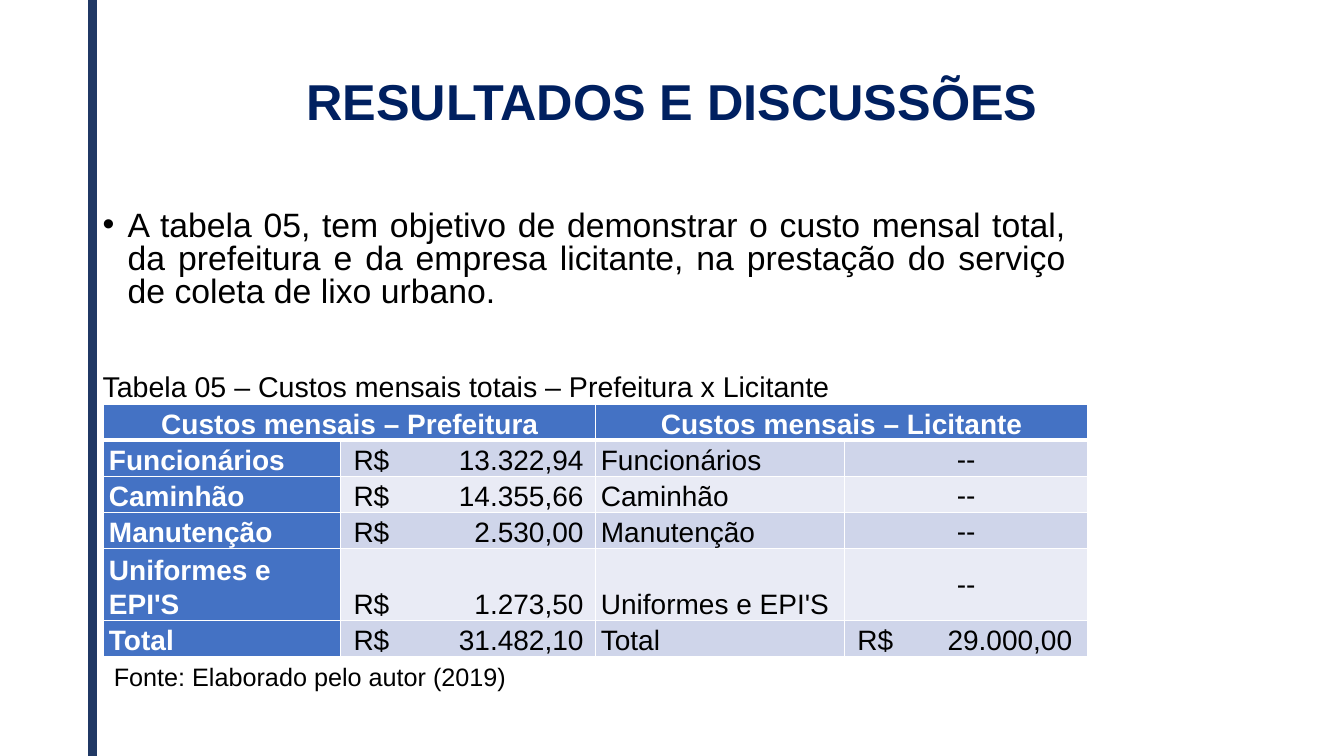
from dataclasses import dataclass

from lxml.etree import SubElement
from pptx import Presentation
from pptx.dml.color import RGBColor
from pptx.enum.shapes import MSO_CONNECTOR
from pptx.enum.text import MSO_ANCHOR, PP_ALIGN
from pptx.oxml import parse_xml
from pptx.oxml.ns import qn
from pptx.util import Pt

NS = 'xmlns:a="http://schemas.openxmlformats.org/drawingml/2006/main"'


@dataclass(frozen=True)
class Theme:
    font: str = "Arial"
    navy: str = "002060"
    bar: str = "203864"
    header: str = "4472C4"
    bands: tuple = ("CFD5EA", "E9EBF5")
    black: str = "000000"
    white: str = "FFFFFF"
    title: float = 36
    body: float = 24.1
    caption: float = 20.4
    cell: float = 20
    source: float = 18


@dataclass(frozen=True)
class CellStyle:
    fill: str
    color: str = "000000"
    bold: bool = False
    align: PP_ALIGN = PP_ALIGN.LEFT
    anchor: MSO_ANCHOR = MSO_ANCHOR.BOTTOM
    top: float = 1
    bottom: float = 1
    tab: float = 0  # right tab stop for amounts, 0 for none


@dataclass(frozen=True)
class Cost:
    item: str
    city: str
    bidder: str
    height: float = 23


T = Theme()
COSTS = [
    Cost("Funcionários", "R$\t13.322,94", "--"),
    Cost("Caminhão", "R$\t14.355,66", "--"),
    Cost("Manutenção", "R$\t2.530,00", "--"),
    Cost("Uniformes e EPI'S", "R$\t1.273,50", "--", 47.5),
    Cost("Total", "R$\t31.482,10", "R$\t29.000,00"),
]
COL_WIDTHS = (169.2, 182.2, 177.8, 173.5)
AMOUNT_TABS = {1: 164.4, 3: 153.5}


def add_run(p, text: str, size: float, color: str = T.black, bold: bool = False) -> None:
    r = p.add_run()
    r.text = text
    r.font.name = T.font
    r.font.size = Pt(size)
    r.font.bold = bold
    r.font.color.rgb = RGBColor.from_string(color)


def add_text_box(s, left: float, top: float, width: float, height: float):
    tf = s.shapes.add_textbox(Pt(left), Pt(top), Pt(width), Pt(height)).text_frame
    tf.word_wrap = True
    return tf


def set_borders(cell, top: float, bottom: float) -> None:
    tcPr = cell._tc.get_or_add_tcPr()
    sides = (("L", 1), ("R", 1), ("T", top), ("B", bottom))
    for i, (side, width) in enumerate(sides):
        tcPr.insert(i, parse_xml(
            f'<a:ln{side} {NS} w="{Pt(width)}"><a:solidFill>'
            f'<a:srgbClr val="{T.white}"/></a:solidFill></a:ln{side}>'))


def fill_cell(cell, text: str, style: CellStyle) -> None:
    cell.margin_left = Pt(9.1 if style.tab else 3.6)
    cell.margin_right = Pt(3.6)
    cell.margin_top = cell.margin_bottom = 0
    cell.vertical_anchor = style.anchor
    cell.fill.solid()
    cell.fill.fore_color.rgb = RGBColor.from_string(style.fill)
    set_borders(cell, style.top, style.bottom)
    p = cell.text_frame.paragraphs[0]
    p.alignment = style.align
    p.line_spacing = 1.07
    if style.tab:
        tabs = SubElement(p._p.get_or_add_pPr(), qn("a:tabLst"))
        SubElement(tabs, qn("a:tab"), pos=str(Pt(style.tab)), algn="r")
    if text:
        add_run(p, text, T.cell, style.color, style.bold)


def add_bar(s) -> None:
    bar = s.shapes.add_connector(MSO_CONNECTOR.STRAIGHT, Pt(66.2), Pt(540), Pt(66.2), 0)
    bar.line.color.rgb = RGBColor.from_string(T.bar)
    bar.line.width = Pt(6)
    SubElement(bar._element.spPr, qn("a:effectLst"))


def add_title(s) -> None:
    sp = s.shapes.title
    sp.left, sp.top, sp.width, sp.height = Pt(66.2), Pt(22.3), Pt(828), Pt(104.4)
    tf = sp.text_frame
    tf.vertical_anchor = MSO_ANCHOR.MIDDLE
    p = tf.paragraphs[0]
    p.alignment = PP_ALIGN.CENTER
    p.line_spacing = 0.9
    add_run(p, "RESULTADOS E DISCUSSÕES", T.title, T.navy, True)


def add_body(s) -> None:
    tf = add_text_box(s, 66.2, 146.9, 702.7, 141.8)
    p = tf.paragraphs[0]
    p.alignment = PP_ALIGN.JUSTIFY
    p.line_spacing = 0.82
    pPr = p._p.get_or_add_pPr()
    pPr.set("marL", str(Pt(18)))
    pPr.set("indent", str(-Pt(18)))
    SubElement(pPr, qn("a:buFont"), typeface=T.font)
    SubElement(pPr, qn("a:buChar"), char="•")
    add_run(p, "A tabela 05, tem objetivo de demonstrar o custo mensal total, da prefeitura "
               "e da empresa licitante, na prestação do serviço de coleta de lixo urbano.", T.body)
    p = tf.add_paragraph()
    p.line_spacing = 0.82
    p.space_before = Pt(46)
    add_run(p, "Tabela 05 – Custos mensais totais – Prefeitura x Licitante", T.caption)


def add_cost_table(s) -> None:
    frame = s.shapes.add_table(len(COSTS) + 1, len(COL_WIDTHS), Pt(74.2), Pt(288.7),
                               Pt(sum(COL_WIDTHS)), Pt(162.5))
    tbl = frame.table
    tbl.horz_banding = False
    for col, width in zip(tbl.columns, COL_WIDTHS):
        col.width = Pt(width)

    # Header: one merged pair of columns for each party
    tbl.rows[0].height = Pt(23)
    head = CellStyle(T.header, T.white, True, PP_ALIGN.CENTER, bottom=3)
    for c, party in ((0, "Prefeitura"), (2, "Licitante")):
        fill_cell(tbl.cell(0, c), f"Custos mensais – {party}", head)
        fill_cell(tbl.cell(0, c + 1), "", head)
        tbl.cell(0, c).merge(tbl.cell(0, c + 1))

    # Cost rows with alternating bands
    for i, cost in enumerate(COSTS, start=1):
        tbl.rows[i].height = Pt(cost.height)
        band = T.bands[(i - 1) % 2]
        top = 3 if i == 1 else 1
        texts = (cost.item, cost.city, cost.item, cost.bidder)
        for c, text in enumerate(texts):
            if c == 0:
                style = CellStyle(T.header, T.white, True, top=top)
            elif text == "--":
                style = CellStyle(band, align=PP_ALIGN.CENTER, anchor=MSO_ANCHOR.MIDDLE, top=top)
            else:
                style = CellStyle(band, top=top, tab=AMOUNT_TABS.get(c, 0))
            fill_cell(tbl.cell(i, c), text, style)


def add_source(s) -> None:
    tf = add_text_box(s, 74.2, 468.7, 306, 51.1)
    add_run(tf.paragraphs[0], "Fonte: Elaborado pelo autor (2019)", T.source)


def main() -> None:
    prs = Presentation()
    prs.slide_width, prs.slide_height = Pt(960), Pt(540)
    s = prs.slides.add_slide(prs.slide_layouts[5])
    add_bar(s)
    add_title(s)
    add_body(s)
    add_cost_table(s)
    add_source(s)
    prs.save("out.pptx")


if __name__ == "__main__":
    main()
